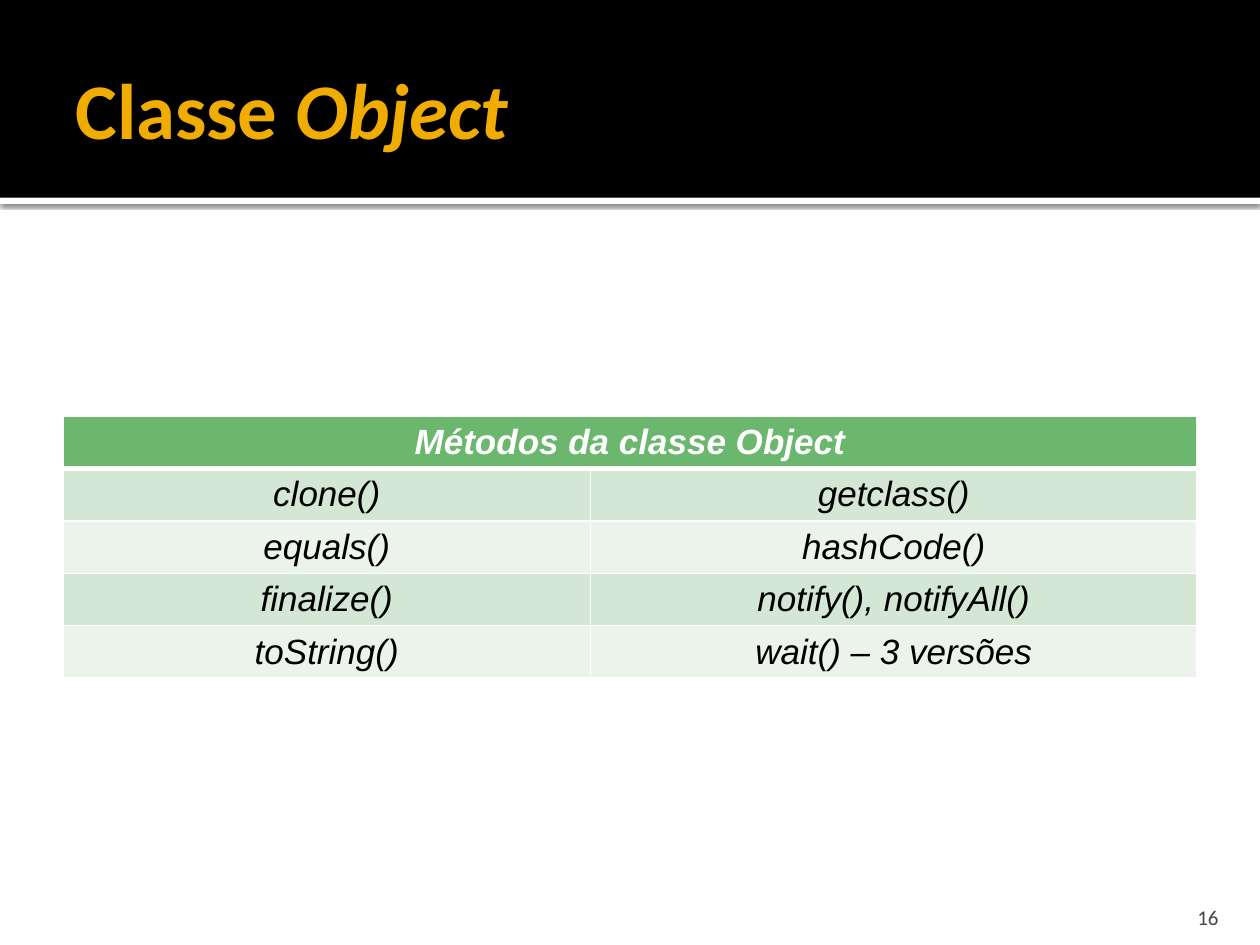
from lxml import etree
from pptx import Presentation
from pptx.dml.color import RGBColor
from pptx.enum.shapes import MSO_SHAPE
from pptx.enum.text import MSO_ANCHOR, PP_ALIGN
from pptx.oxml.ns import qn
from pptx.util import Pt

RECT = MSO_SHAPE.RECTANGLE
MIDDLE, BOTTOM = MSO_ANCHOR.MIDDLE, MSO_ANCHOR.BOTTOM
LEFT, CENTER, RIGHT = PP_ALIGN.LEFT, PP_ALIGN.CENTER, PP_ALIGN.RIGHT

BLACK = RGBColor(0x00, 0x00, 0x00)
WHITE = RGBColor(0xFF, 0xFF, 0xFF)
AMBER = RGBColor(0xF0, 0xAD, 0x00)
GRAY = RGBColor(0x45, 0x45, 0x45)
GREEN = RGBColor(0x6B, 0xB7, 0x6D)
BANDS = (RGBColor(0xD4, 0xE6, 0xD4), RGBColor(0xEB, 0xF3, 0xEB))

TITLE = {"name": "Calibri", "size": Pt(45), "bold": True}
HEADING = {"name": "Arial", "size": Pt(20), "bold": True, "italic": True}
METHOD = {**HEADING, "bold": False}
NUMBER = {"name": "Calibri", "size": Pt(12)}

METHODS = [
    ("clone()", "getclass()"),
    ("equals()", "hashCode()"),
    ("finalize()", "notify(), notifyAll()"),
    ("toString()", "wait() – 3 versões"),
]


def add_run(p, text, color, formats):
    """Append a formatted run to a paragraph."""
    r = p.add_run()
    r.text = text
    for name, value in formats.items():
        setattr(r.font, name, value)
    r.font.color.rgb = color


def add_text(s, box, runs, color, align, anchor, margins):
    """Place one paragraph of (text, formats) runs in a text box."""
    tf = s.shapes.add_textbox(*map(Pt, box)).text_frame
    tf.word_wrap = True
    tf.vertical_anchor = anchor
    for side, margin in zip(("left", "top", "right", "bottom"), margins):
        setattr(tf, f"margin_{side}", Pt(margin))
    p = tf.paragraphs[0]
    p.alignment = align
    for text, formats in runs:
        add_run(p, text, color, formats)


def add_bar(s, box, color):
    """Place a plain filled rectangle."""
    sp = s.shapes.add_shape(RECT, *map(Pt, box))
    sp.shadow.inherit = False
    sp.fill.solid()
    sp.fill.fore_color.rgb = color
    sp.line.fill.background()
    return sp


def add_shadow(sp, blur, distance, alpha):
    """Cast a black shadow straight down from a shape."""
    effects = sp._element.spPr.find(qn("a:effectLst"))
    shadow = etree.SubElement(
        effects, qn("a:outerShdw"), blurRad=str(Pt(blur)), dist=str(Pt(distance)),
        dir="5400000", algn="tl", rotWithShape="0")
    color = etree.SubElement(shadow, qn("a:srgbClr"), val=str(BLACK))
    etree.SubElement(color, qn("a:alpha"), val=str(alpha * 1000))


def add_header(s, left, top, width, height):
    """Build the black title band with its shadowed white edge."""
    edge = add_bar(s, (left, top + height, width, 3.6), WHITE)
    add_shadow(edge, 2.5, 0.8, 60)
    add_bar(s, (left, top, width, height), BLACK)
    runs = [("Classe ", TITLE), ("Object", {**TITLE, "italic": True})]
    add_text(s, (left + 36, top + 12.24, 621.36, 98.64), runs, AMBER,
             LEFT, MIDDLE, (7.2, 3.6, 3.6, 3.6))


def set_borders(cell, widths):
    """Draw white borders of the given widths on a cell."""
    tc_pr = cell._tc.get_or_add_tcPr()
    for side, width in widths.items():
        ln = etree.SubElement(tc_pr, qn(f"a:ln{side}"), w=str(Pt(width)))
        fill = etree.SubElement(ln, qn("a:solidFill"))
        etree.SubElement(fill, qn("a:srgbClr"), val=str(WHITE))


def fill_cell(cell, text, fill, color, formats, top=1, bottom=1):
    """Write and style one table cell."""
    set_borders(cell, {"L": 1, "R": 1, "T": top, "B": bottom})
    cell.fill.solid()
    cell.fill.fore_color.rgb = fill
    cell.vertical_anchor = MIDDLE
    cell.margin_top = cell.margin_bottom = Pt(3)
    p = cell.text_frame.paragraphs[0]
    p.alignment = CENTER
    if text:
        add_run(p, text, color, formats)


def add_methods(s, left, top, width, row_height):
    """Build the table of methods under a merged heading."""
    count = len(METHODS) + 1
    table = s.shapes.add_table(
        count, 2, Pt(left), Pt(top), Pt(width), Pt(row_height * count)).table
    first = 301.5
    for column, size in zip(table.columns, (first, width - first)):
        column.width = Pt(size)
    for row in table.rows:
        row.height = Pt(row_height)
    for col, text in enumerate(("Métodos da classe Object", "")):
        fill_cell(table.cell(0, col), text, GREEN, WHITE, HEADING, bottom=3)
    table.cell(0, 0).merge(table.cell(0, 1))
    for i, names in enumerate(METHODS):
        for col, name in enumerate(names):
            fill_cell(table.cell(i + 1, col), name, BANDS[i % 2], BLACK, METHOD,
                      top=1 if i else 3)


def add_number(s, left, top, width, height):
    """Place the slide number."""
    add_text(s, (left, top, width, height), [("16", NUMBER)], GRAY,
             RIGHT, BOTTOM, (7.2, 3.6, 7.2, 0))


def main():
    """Build and save the slide."""
    prs = Presentation()
    prs.slide_width, prs.slide_height = Pt(720), Pt(540)
    s = prs.slides.add_slide(prs.slide_layouts[6])
    add_header(s, 0, 0, 720, 113)
    add_methods(s, 36, 237.6, 648, 29.5)
    add_number(s, 645.84, 509.76, 57.6, 21.6)
    prs.save("out.pptx")


if __name__ == "__main__":
    main()
